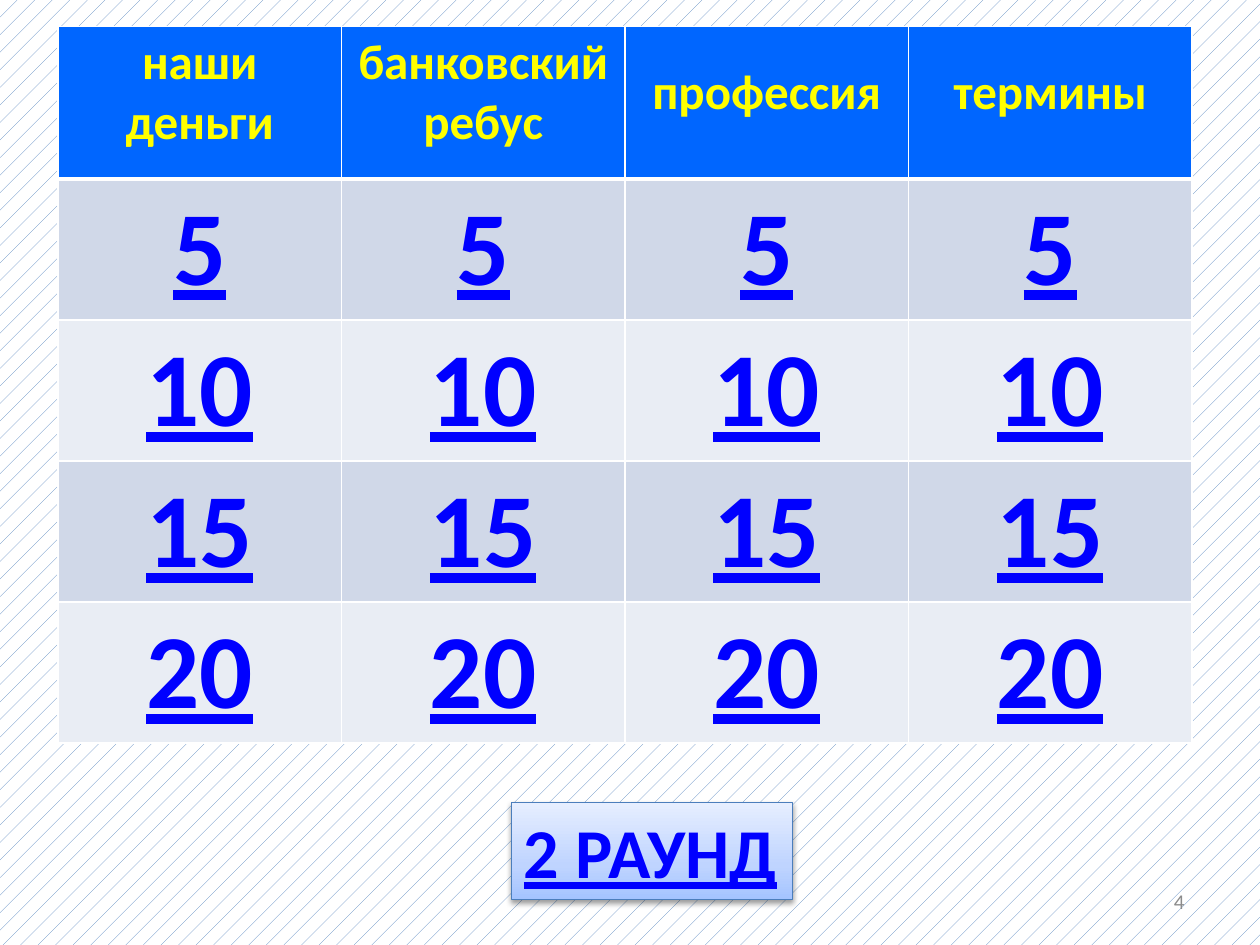
from copy import deepcopy

from lxml import etree
from pptx import Presentation
from pptx.dml.color import RGBColor
from pptx.enum import dml, shapes, text
from pptx.oxml import ns
from pptx.util import Inches, Pt

WHITE = RGBColor(0xFF, 0xFF, 0xFF)
PATTERN_BLUE = RGBColor(0x4F, 0x81, 0xBD)
HEADER_BLUE = RGBColor(0x00, 0x66, 0xFF)
HEADER_YELLOW = RGBColor(0xFF, 0xFF, 0x00)
LINK_BLUE = RGBColor(0x00, 0x00, 0xFF)
BAND_DARK = RGBColor(0xD0, 0xD8, 0xE8)
BAND_LIGHT = RGBColor(0xE9, 0xED, 0xF4)
BUTTON_LINE = RGBColor(0x4B, 0x7E, 0xBC)
BUTTON_STOPS = [
    (0, RGBColor(0xA4, 0xC4, 0xFF)),
    (0.35, RGBColor(0xBF, 0xD4, 0xFF)),
    (1, RGBColor(0xE6, 0xEE, 0xFF)),
]
NUMBER_GREY = RGBColor(0x8C, 0x8C, 0x8C)

TOPICS = ["наши деньги", "банковский\nребус", "профессия", "термины"]
POINTS = [5, 10, 15, 20]


def style_text(frame, size, color, align, bold=False, underline=None):
    for paragraph in frame.paragraphs:
        paragraph.alignment = align
        font = paragraph.font
        font.name, font.size, font.bold = "Calibri", Pt(size), bold
        font.underline = underline
        font.color.rgb = color
        for run in paragraph.runs:
            run.font.underline = underline


def add_borders(cell, top, bottom):
    """Draw white cell borders; top and bottom are widths in points."""
    properties = cell._tc.get_or_add_tcPr()
    widths = {"lnL": 1, "lnR": 1, "lnT": top, "lnB": bottom}
    for place, (tag, width) in enumerate(widths.items()):
        line = etree.Element(ns.qn(f"a:{tag}"), w=str(Pt(width)))
        fill = etree.SubElement(line, ns.qn("a:solidFill"))
        etree.SubElement(fill, ns.qn("a:srgbClr"), val=str(WHITE))
        properties.insert(place, line)


prs = Presentation()
prs.slide_width, prs.slide_height = Inches(10), Inches(7.5)
slide = prs.slides.add_slide(prs.slide_layouts[6])

background = slide.background.fill
background.patterned()
background.pattern = dml.MSO_PATTERN.PERCENT_5
background.fore_color.rgb = PATTERN_BLUE
background.back_color.rgb = WHITE

# Game board: topics across, points down
board = slide.shapes.add_table(
    len(POINTS) + 1, len(TOPICS), Inches(0.46), Inches(0.21), Inches(9), Inches(5.69)
).table
for row in board.rows:
    row.height = Inches(1.12)
board.rows[0].height = Inches(1.21)

for column, topic in enumerate(TOPICS):
    header = board.cell(0, column)
    header.text = topic
    if topic in ("профессия", "термины"):
        header.margin_top = Inches(0.29)
    style_text(header.text_frame, 28, HEADER_YELLOW, text.PP_ALIGN.CENTER, bold=True)
    header.fill.solid()
    header.fill.fore_color.rgb = HEADER_BLUE
    add_borders(header, top=1, bottom=3)

    for row, points in enumerate(POINTS, start=1):
        cell = board.cell(row, column)
        cell.text = str(points)
        style_text(cell.text_frame, 60, LINK_BLUE, text.PP_ALIGN.CENTER, True, True)
        cell.fill.solid()
        cell.fill.fore_color.rgb = BAND_DARK if row % 2 else BAND_LIGHT
        add_borders(cell, top=3 if row == 1 else 1, bottom=1)

# Button to the second round
button = slide.shapes.add_shape(
    shapes.MSO_SHAPE.RECTANGLE, Inches(4.06), Inches(6.37), Inches(2.23), Inches(0.77)
)
button.line.color.rgb = BUTTON_LINE
button.line.width = Pt(0.75)
button.fill.gradient()
button.fill.gradient_angle = 90
stop_list = button._element.spPr.find(f".//{ns.qn('a:gsLst')}")
stop_list.append(deepcopy(stop_list[-1]))
for stop, (position, color) in zip(button.fill.gradient_stops, BUTTON_STOPS):
    stop.position = position
    stop.color.rgb = color

button.shadow.inherit = False
effects = button._element.spPr.find(ns.qn("a:effectLst"))
shadow = etree.SubElement(
    effects, ns.qn("a:outerShdw"), blurRad=str(Pt(3.1)), dist=str(Pt(1.6)),
    dir="5400000", rotWithShape="0",
)
shadow_color = etree.SubElement(shadow, ns.qn("a:srgbClr"), val="000000")
etree.SubElement(shadow_color, ns.qn("a:alpha"), val="38000")

label = button.text_frame
label.text = "2 РАУНД"
label.word_wrap = False
label.auto_size = text.MSO_AUTO_SIZE.SHAPE_TO_FIT_TEXT
label.vertical_anchor = text.MSO_ANCHOR.TOP
style_text(label, 40, LINK_BLUE, text.PP_ALIGN.LEFT, True, True)

page_number = slide.shapes.add_textbox(
    Inches(7.17), Inches(6.95), Inches(2.33), Inches(0.4)
).text_frame
page_number.text = "4"
page_number.word_wrap = True
page_number.vertical_anchor = text.MSO_ANCHOR.MIDDLE
style_text(page_number, 12, NUMBER_GREY, text.PP_ALIGN.RIGHT)

prs.save("out.pptx")
